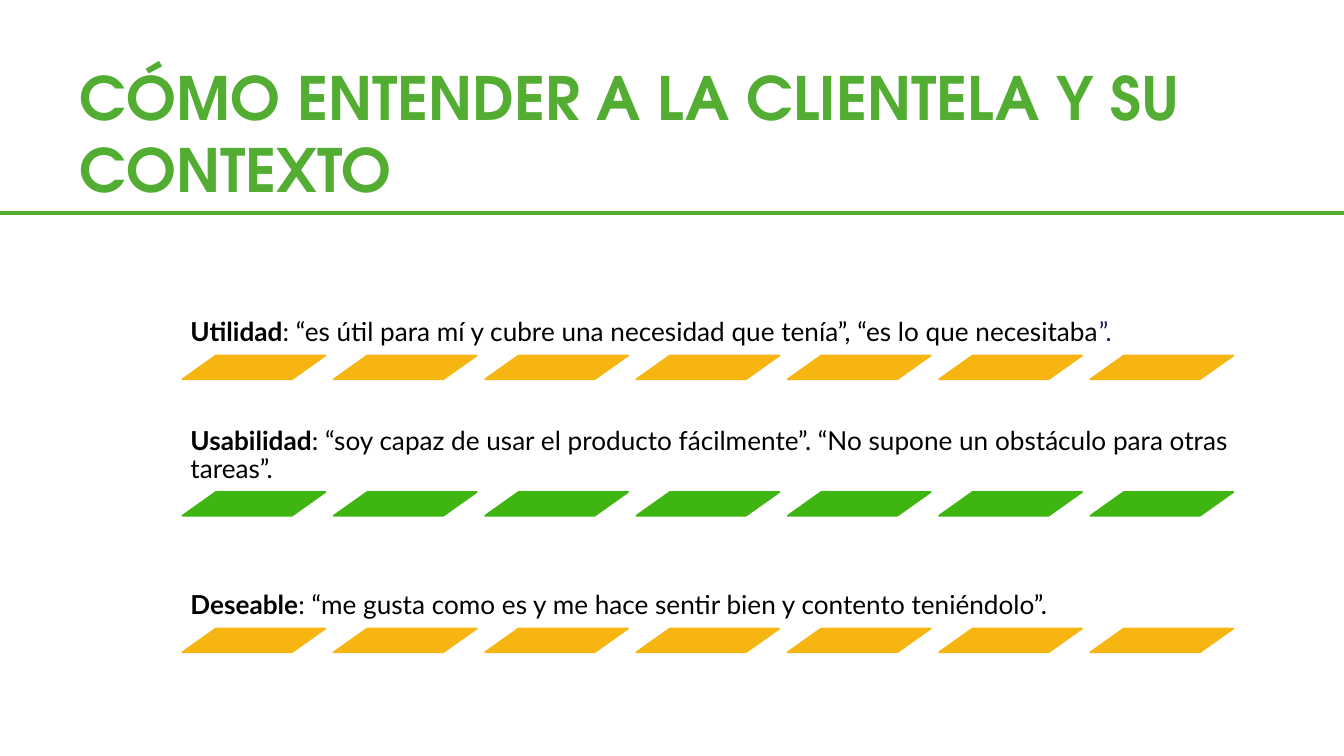
from pptx import Presentation
from pptx import util as u
from pptx.dml.color import RGBColor
from pptx.enum import shapes, text
from pptx.oxml.ns import qn
from lxml import etree

COLORS = {
    "heading": "53AD32",
    "rule": "52AE32",
    "amber": "F7B512",
    "green": "3FB512",
    "body": "000000",
    "accent": "222268",
}
TITLE = "CÓMO ENTENDER A LA CLIENTELA Y SU CONTEXTO"
QUALITIES = [
    ("amber", [("Utilidad", "body", True),
               (": “es útil para mí y cubre una necesidad que tenía”, “es lo que necesitaba", "body", False),
               ("”.", "accent", False)]),
    ("green", [("Usabilidad", "body", True),
               (": “soy capaz de usar el producto fácilmente”. “No supone un obstáculo para otras tareas”.",
                "body", False)]),
    ("amber", [("Deseable", "body", True),
               (": “me gusta como es y me hace sentir bien y contento teniéndolo”.", "body", False)]),
]


def color(name):
    """Return the named palette colour."""
    return RGBColor.from_string(COLORS[name])


def apply_format(target, values):
    """Set every attribute in a dict of format values."""
    for name, value in values.items():
        setattr(target, name, value)


def add_run(paragraph, content, color_name, **font_format):
    """Append a formatted run to a paragraph."""
    run = paragraph.add_run()
    run.text = content
    apply_format(run.font, font_format)
    run.font.color.rgb = color(color_name)


def add_heading(slide, left, top, width, height):
    """Place the title with a full-width rule along its lower edge."""
    title = slide.shapes.title
    apply_format(title, {"left": left, "top": top, "width": width, "height": height})
    apply_format(title.text_frame, {
        "word_wrap": True,
        "vertical_anchor": text.MSO_ANCHOR.TOP,
        "auto_size": text.MSO_AUTO_SIZE.SHAPE_TO_FIT_TEXT,
    })
    paragraph = title.text_frame.paragraphs[0]
    paragraph.alignment = text.PP_ALIGN.LEFT
    add_run(paragraph, TITLE, "heading", name="TeX Gyre Adventor", size=u.Pt(32), bold=True)
    bottom = top + height
    rule = slide.shapes.add_connector(shapes.MSO_CONNECTOR.STRAIGHT, 0, bottom, u.Cm(25.4), bottom)
    rule.line.color.rgb = color("rule")
    rule.line.width = u.Pt(2)
    etree.SubElement(rule._element.spPr, qn("a:effectLst"))


def add_stripes(slide, left, top, color_name, count=7):
    """Draw an evenly spaced row of slanted stripes."""
    for index in range(count):
        stripe = slide.shapes.add_shape(
            shapes.MSO_SHAPE.PARALLELOGRAM,
            left + index * u.Cm(2.86), top, u.Cm(2.7), u.Cm(0.45))
        stripe.adjustments[0] = 1.41
        stripe.shadow.inherit = False
        stripe.fill.solid()
        stripe.fill.fore_color.rgb = color(color_name)
        stripe.line.color.rgb = color(color_name)
        stripe.line.width = u.Pt(1)


def add_quality(slide, left, top, width, height, stripe_color, runs):
    """Place one quality statement above its row of stripes."""
    frame = slide.shapes.add_textbox(left, top, width, height).text_frame
    inset = u.Cm(0.15)
    apply_format(frame, {
        "word_wrap": True,
        "vertical_anchor": text.MSO_ANCHOR.BOTTOM,
        "margin_left": inset,
        "margin_right": inset,
        "margin_top": inset,
        "margin_bottom": inset,
    })
    paragraph = frame.paragraphs[0]
    paragraph.line_spacing = 0.9
    for content, color_name, bold in runs:
        add_run(paragraph, content, color_name, name="Lato", size=u.Pt(14), bold=bold)
    add_stripes(slide, left, top + height, stripe_color)


def main():
    """Build and save the presentation."""
    presentation = Presentation()
    presentation.slide_width = u.Cm(25.4)
    presentation.slide_height = u.Cm(14.29)
    slide = presentation.slides.add_slide(presentation.slide_layouts[5])
    add_heading(slide, u.Cm(1.25), u.Cm(1.02), u.Cm(22.89), u.Cm(3))
    for index, (stripe_color, runs) in enumerate(QUALITIES):
        add_quality(slide, u.Cm(3.45), u.Cm(4.88) + index * u.Cm(2.58),
                    u.Cm(20.24), u.Cm(1.84), stripe_color, runs)
    presentation.save("out.pptx")


if __name__ == "__main__":
    main()
